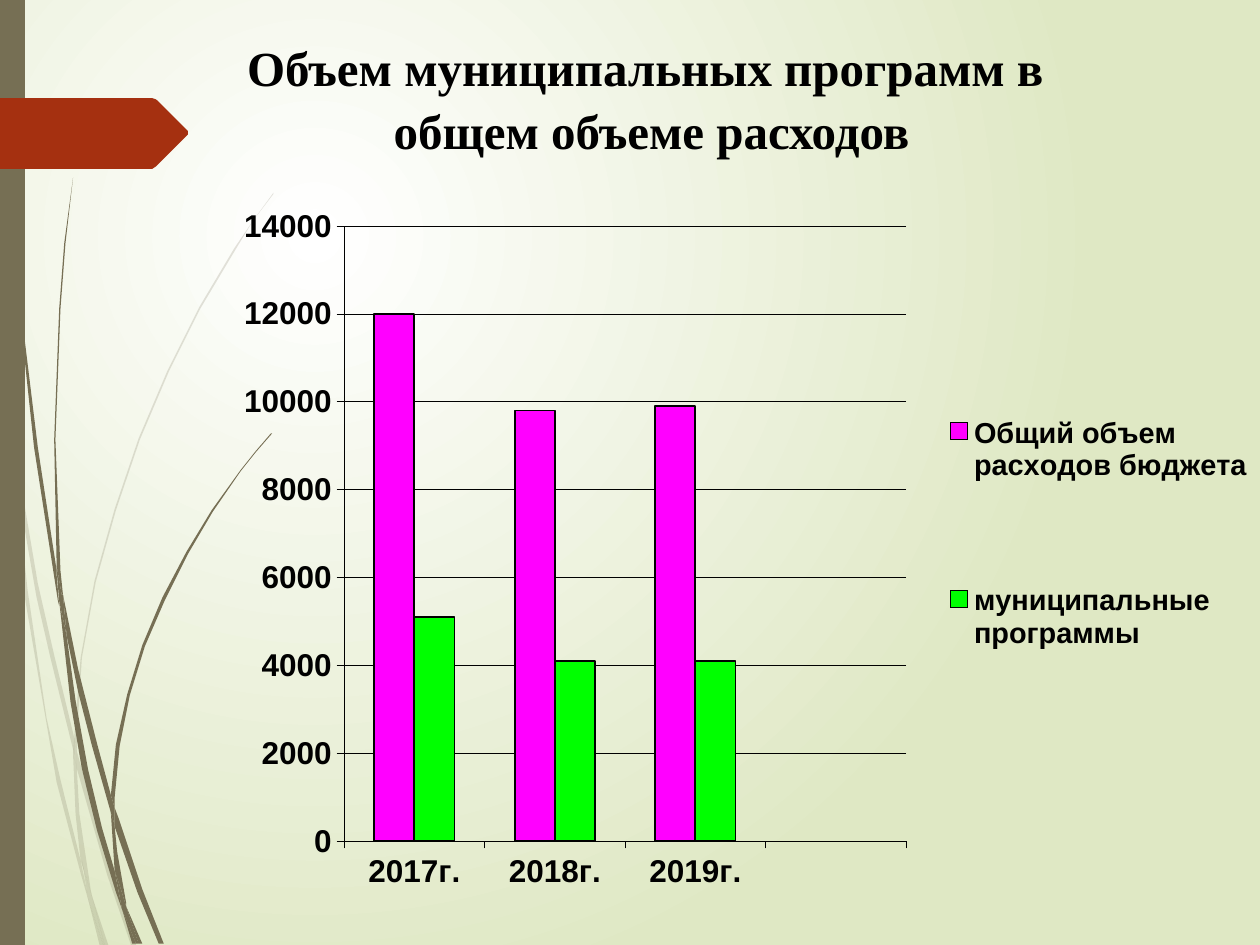
from lxml import etree
from pptx import Presentation
from pptx.chart.data import CategoryChartData
from pptx.dml.color import RGBColor
from pptx.enum.chart import XL_CHART_TYPE, XL_LEGEND_POSITION, XL_TICK_LABEL_POSITION, XL_TICK_MARK
from pptx.enum.text import MSO_ANCHOR, MSO_AUTO_SIZE, PP_ALIGN
from pptx.oxml.ns import qn
from pptx.util import Pt

COLUMN = XL_CHART_TYPE.COLUMN_CLUSTERED
RIGHT = XL_LEGEND_POSITION.RIGHT
LOW = XL_TICK_LABEL_POSITION.LOW
OUT, NONE = XL_TICK_MARK.OUTSIDE, XL_TICK_MARK.NONE
TOP, CENTER = MSO_ANCHOR.TOP, PP_ALIGN.CENTER
FIXED = MSO_AUTO_SIZE.NONE
PX = 9144  # 100 px to the inch

# Outlines of the grass blades: pale ones behind, dark ones in front
PALE = [
    [(8, 350), (6, 322), (0, 282), (0, 299), (7, 344)],
    [(40, 522), (59, 599), (59, 586), (43, 520), (30, 463), (10, 345), (12, 376), (29, 474)],
    [(64, 607), (61, 596), (61, 610), (85, 694), (104, 750), (108, 750), (88, 692)],
    [(83, 750), (86, 750), (73, 711)],
    [(64, 683), (48, 619), (37, 570), (22, 469), (12, 376), (8, 350), (19, 470), (45, 621),
     (64, 693), (70, 714), (69, 707)],
    [(58, 599), (60, 646), (64, 683), (67, 692), (73, 711), (72, 706), (63, 646), (61, 610),
     (61, 608)],
    [(61, 584), (65, 522), (76, 462), (92, 405), (111, 349), (134, 295), (159, 245), (187, 198),
     (201, 175), (217, 154), (217, 153), (201, 175), (186, 197), (158, 244), (133, 294),
     (110, 348), (91, 404), (75, 461), (64, 522), (59, 584), (59, 586), (61, 596)],
    [(70, 714), (79, 750), (82, 750)],
    [(61, 608), (61, 610), (61, 596), (59, 586), (58, 599)],
    [(67, 692), (65, 683), (69, 707), (70, 714), (82, 750), (83, 750), (73, 711)],
]
DARK = [
    [(5, 110), (14, 233), (27, 355), (46, 477), (47, 481), (45, 457), (45, 453), (30, 355),
     (15, 232), (6, 109), (4, 48), (3, 0), (2, 0), (3, 48)],
    [(73, 592), (88, 645), (88, 633), (88, 631), (77, 590), (62, 531), (50, 472), (53, 505),
     (62, 549)],
    [(94, 649), (91, 641), (91, 656), (109, 708), (126, 749), (130, 749), (113, 706)],
    [(91, 691), (81, 657), (70, 611), (60, 556), (53, 505), (47, 477), (56, 557), (65, 610),
     (77, 659), (92, 708), (97, 722), (96, 717)],
    [(50, 472), (48, 453), (44, 349), (48, 245), (52, 193), (58, 141), (51, 193), (47, 245),
     (43, 349), (45, 449), (49, 472)],
    [(110, 749), (113, 749), (100, 719)],
    [(47, 477), (53, 505), (50, 472), (49, 472), (45, 449), (45, 453)],
    [(91, 633), (95, 592), (103, 552), (115, 513), (131, 476), (149, 440), (169, 406), (191, 374),
     (203, 359), (216, 344), (215, 344), (203, 358), (191, 373), (168, 405), (148, 438),
     (129, 474), (113, 512), (101, 551), (92, 591), (88, 631), (91, 641)],
    [(97, 722), (105, 749), (108, 749)],
    [(88, 645), (91, 691), (96, 706), (100, 719), (100, 716), (93, 676), (91, 656), (90, 651)],
    [(88, 645), (90, 651), (91, 656), (91, 641), (88, 631), (88, 633)],
    [(96, 706), (91, 691), (96, 717), (97, 722), (108, 749), (110, 749), (100, 719)],
]
ARROW = [(149, 107), (124, 132), (121, 134), (0, 134), (0, 78), (121, 78), (124, 79), (149, 104)]
BAR = [(0, 0), (20, 0), (20, 750), (0, 750)]

YEARS = ["2017г.", "2018г.", "2019г.", ""]
SERIES = [
    ("Общий объем расходов бюджета", (12000, 9800, 9900, None), "FF00FF"),
    ("муниципальные программы", (5100, 4100, 4100, None), "00FF00"),
]


def rgb(code):
    return RGBColor.from_string(code)


def style(font, size, face="Arial", color="000000"):
    font.size, font.name, font.bold = Pt(size), face, True
    font.color.rgb = rgb(color)


def write(frame, text, size, face, gap=0):
    """Fill a text frame, one centred paragraph a line."""
    frame.text = text
    for para in frame.paragraphs:
        para.alignment, para.space_before = CENTER, Pt(gap)
        para.line_spacing = 1.0
        for run in para.runs:
            style(run.font, size, face)


def stroke(line, width):
    line.color.rgb = rgb("000000")
    line.width = Pt(width)


def place(node, index, box, inner=False):
    """Give a chart part a manual layout, in shares of the chart."""
    old = node.find(qn("c:layout"))
    if old is not None:
        node.remove(old)
    layout = etree.Element(qn("c:layout"))
    manual = etree.SubElement(layout, qn("c:manualLayout"))
    pairs = [("layoutTarget", "inner")] if inner else []
    pairs += [("xMode", "edge"), ("yMode", "edge"), *zip("xywh", box)]
    for tag, val in pairs:
        etree.SubElement(manual, qn("c:" + tag), val=str(val))
    node.insert(index, layout)


class Deck:
    def __init__(self, wide, high):
        self.file = Presentation()
        self.file.slide_width, self.file.slide_height = wide * PX, high * PX
        self.slide = self.file.slides.add_slide(self.file.slide_layouts[5])

    def glow(self, near, far):
        """Radial gradient background."""
        fill = self.slide.background.fill
        fill.gradient()
        for stop, code in zip(fill.gradient_stops, (near, far)):
            stop.color.rgb = rgb(code)
        lin = self.slide.element.find(".//" + qn("a:lin"))
        ring = etree.Element(qn("a:path"), path="circle")
        etree.SubElement(ring, qn("a:fillToRect"), l="50000", t="50000", r="100000", b="100000")
        lin.getparent().replace(lin, ring)

    def patch(self, points, color, alpha=None):
        pen = self.slide.shapes.build_freeform(*points[0], scale=PX)
        pen.add_line_segments(points[1:], close=True)
        shape = pen.convert_to_shape()
        shape.shadow.inherit = False
        shape.fill.solid()
        shape.fill.fore_color.rgb = rgb(color)
        shape.line.fill.background()
        if alpha:
            tint = shape.element.spPr.find(".//" + qn("a:srgbClr"))
            etree.SubElement(tint, qn("a:alpha"), val=str(alpha * 1000))

    def title(self, text, left, top, wide, high):
        box = self.slide.shapes.title
        box.left, box.top, box.width, box.height = (n * PX for n in (left, top, wide, high))
        frame = box.text_frame
        frame.word_wrap, frame.auto_size, frame.vertical_anchor = True, FIXED, TOP
        write(frame, text, 28, "Times New Roman", gap=2)

    def chart(self, left, top, wide, high):
        data = CategoryChartData()
        data.categories = YEARS
        for name, vals, _ in SERIES:
            data.add_series(name, vals)
        box = (n * PX for n in (left, top, wide, high))
        chart = self.slide.shapes.add_chart(COLUMN, *box, data).chart
        chart.has_title = False
        style(chart.font, 18)

        # Columns
        plot = chart.plots[0]
        plot.gap_width, plot.overlap, plot.vary_by_categories = 150, 0, False
        for bars, (_, _, color) in zip(plot.series, SERIES):
            bars.format.fill.solid()
            bars.format.fill.fore_color.rgb = rgb(color)
            stroke(bars.format.line, 1)

        # Axes
        for axis in (chart.category_axis, chart.value_axis):
            axis.major_tick_mark, axis.minor_tick_mark = OUT, NONE
            style(axis.tick_labels.font, 18)
            stroke(axis.format.line, 0.25)
        chart.category_axis.tick_label_position = LOW
        scale = chart.value_axis
        scale.minimum_scale, scale.maximum_scale, scale.major_unit = 0, 14000, 2000
        stroke(scale.major_gridlines.format.line, 0.25)

        # Legend
        chart.has_legend = True
        key = chart.legend
        key.position, key.include_in_layout = RIGHT, False
        style(key.font, 16.5)
        place(chart.element.find(".//" + qn("c:plotArea")), 0, (0.12, 0.05, 0.54, 0.83), True)
        place(chart.element.find(".//" + qn("c:legend")), 1, (0.69, 0.17, 0.31, 0.59))


def main():
    deck = Deck(1000, 750)
    deck.glow("FFFFFF", "DFE8C4")
    # Grass, side bar and arrow
    for blade in PALE:
        deck.patch(blade, "766F54", alpha=20)
    for blade in DARK + [BAR]:
        deck.patch(blade, "766F54")
    deck.patch(ARROW, "A53010")
    # Title and chart
    deck.title("Объем муниципальных программ в \nобщем объеме расходов", 67, 25, 900, 125)
    deck.chart(174, 150, 826, 588)
    deck.file.save("out.pptx")


if __name__ == "__main__":
    main()
